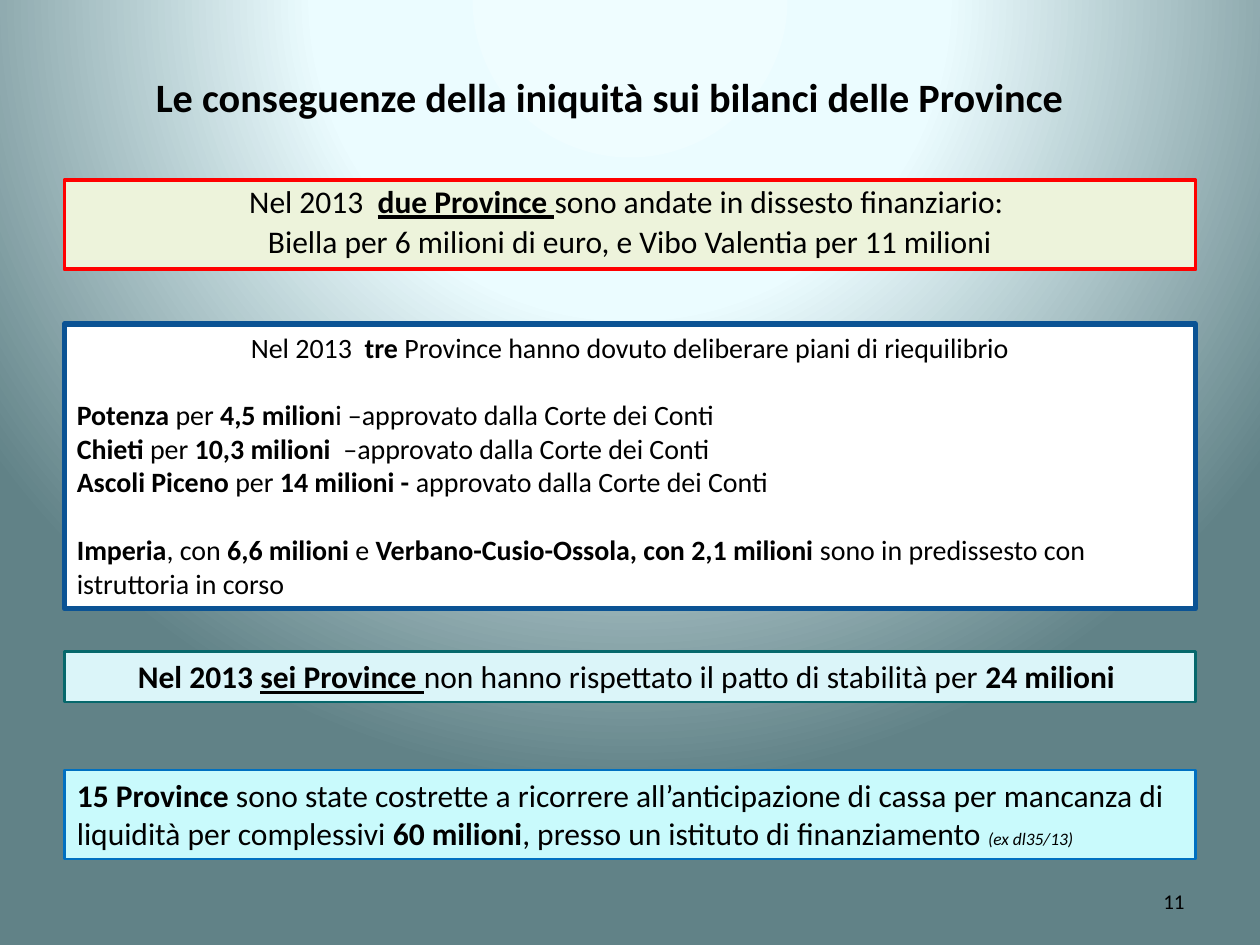
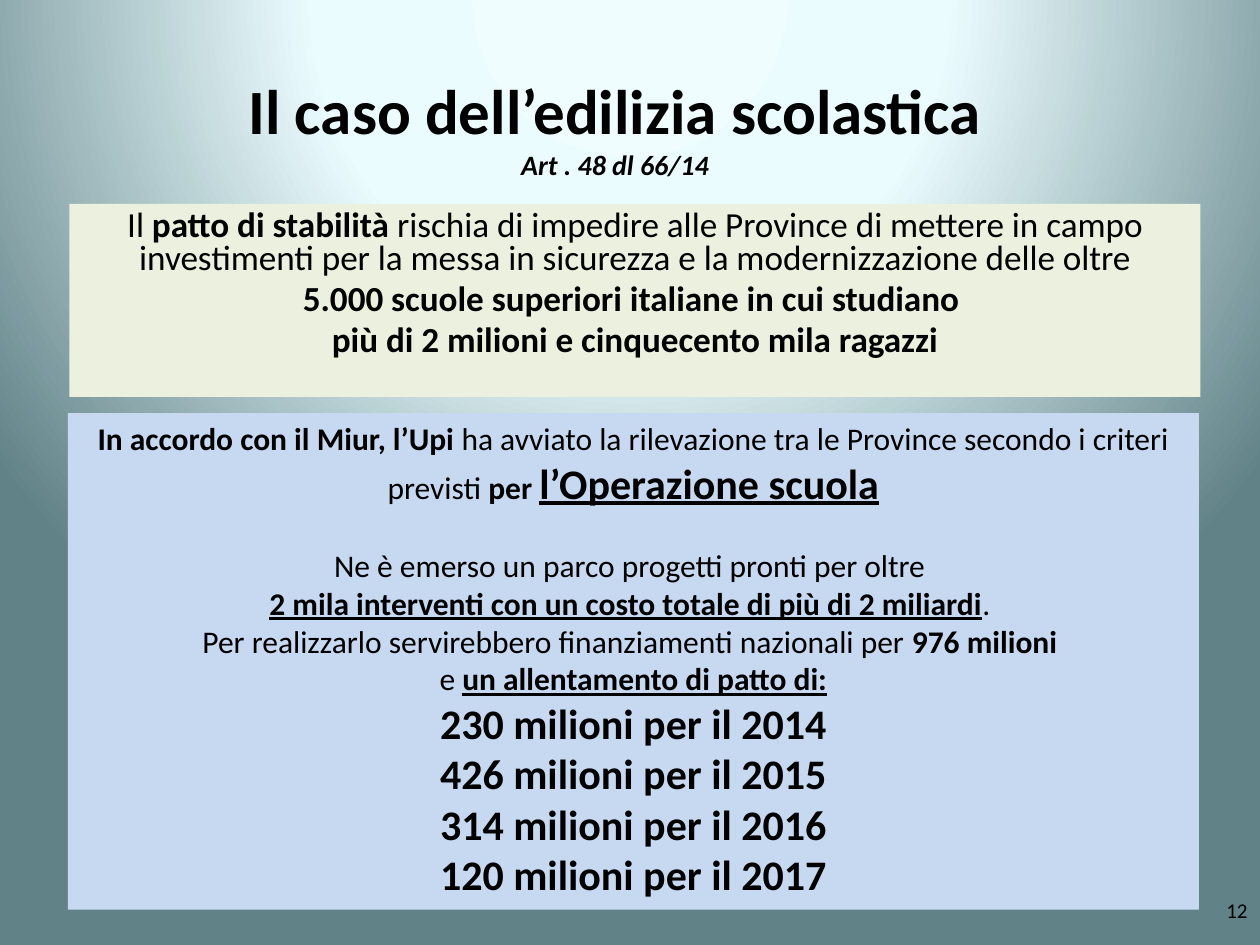
from pptx import Presentation
from pptx.dml.color import RGBColor
from pptx.enum.shapes import MSO_SHAPE
from pptx.enum.text import MSO_ANCHOR, MSO_AUTO_SIZE, PP_ALIGN
from pptx.oxml import parse_xml
from pptx.oxml.ns import nsdecls, qn
from pptx.util import Cm, Pt

FONT = "Calibri"
COLORS = {
    "text": "000000",
    "glow": "EFFDFF",
    "halo": "EBFCFF",
    "edge": "618287",
    "cream": "EDF3DB",
    "sand": "EBF1DE",
    "white": "FFFFFF",
    "ice": "DBF5F9",
    "aqua": "C9FAFC",
    "sky": "C6D9F1",
    "red": "FF0000",
    "navy": "0B5394",
    "teal": "06686C",
    "blue": "0070C0",
}
LEFT, WIDTH = 1.3, 22.8


def rgb(name):
    return RGBColor.from_string(COLORS[name])


def set_background(master):
    master.background.fill.gradient()
    grad = master.element.find(".//" + qn("p:bgPr")).find(qn("a:gradFill"))
    stops = "".join(
        f'<a:gs pos="{pos * 1000}"><a:srgbClr val="{COLORS[name]}"/></a:gs>'
        for pos, name in ((0, "glow"), (40, "halo"), (100, "edge"))
    )
    grad.getparent().replace(grad, parse_xml(
        f'<a:gradFill {nsdecls("a")} rotWithShape="1"><a:gsLst>{stops}</a:gsLst>'
        '<a:path path="circle">'
        '<a:fillToRect l="50000" t="-80000" r="50000" b="180000"/>'
        '</a:path></a:gradFill>'
    ))


def place(sp, left, top, width, height):
    sp.left, sp.top, sp.width, sp.height = map(Cm, (left, top, width, height))


def add_run(p, text, style="", size=18):
    r = p.add_run()
    r.text = text
    r.font.size = Pt(size)
    r.font.color.rgb = rgb("text")
    r.font.bold = "b" in style
    r.font.italic = "i" in style
    r.font.underline = "u" in style


def write(sp, paragraphs, size=18, align=PP_ALIGN.CENTER, anchor=MSO_ANCHOR.TOP):
    tf = sp.text_frame
    tf.word_wrap = True
    tf.auto_size = MSO_AUTO_SIZE.NONE
    tf.vertical_anchor = anchor
    for i, runs in enumerate(paragraphs):
        p = tf.add_paragraph() if i else tf.paragraphs[0]
        p.alignment = align
        p.font.name = FONT
        for text, style, *own_size in runs:
            add_run(p, text, style, *(own_size or [size]))
    return tf.paragraphs


def add_title(slide, height, paragraphs, size):
    sp = slide.shapes.title
    place(sp, 2.8, 1.32, 19.2, height)
    write(sp, paragraphs, size)


def paint(sp, fill, line=None, line_width=0):
    sp.fill.solid()
    sp.fill.fore_color.rgb = rgb(fill)
    if line:
        sp.line.color.rgb = rgb(line)
        sp.line.width = Pt(line_width)
    else:
        sp.line.fill.background()


def fill_body(slide, box, paragraphs, size, spacing, *colors):
    sp = slide.placeholders[1]
    place(sp, *box)
    paint(sp, *colors)
    for p in write(sp, paragraphs, size):
        p.line_spacing = spacing
        p.space_before = Pt(size * 0.2)
        pPr = p._p.get_or_add_pPr()
        pPr.set("marL", "0")
        pPr.set("indent", "0")
        pPr.insert_element_before(
            parse_xml(f'<a:buNone {nsdecls("a")}/>'), "a:tabLst", "a:defRPr", "a:extLst")


def add_box(slide, box, paragraphs, colors, size=18, align=PP_ALIGN.CENTER):
    sp = slide.shapes.add_shape(MSO_SHAPE.RECTANGLE, *map(Cm, box))
    sp.shadow.inherit = False
    paint(sp, *colors)
    return write(sp, paragraphs, size, align)


def add_number(slide, number, left, top):
    sp = slide.shapes.add_textbox(Cm(left), Cm(top), Cm(5.92), Cm(1.02))
    write(sp, [[(str(number), "")]], 12, PP_ALIGN.RIGHT, MSO_ANCHOR.MIDDLE)


def build_budgets(slide):
    add_title(slide, 1.24, [
        [("Le conseguenze della iniquità sui bilanci delle Province ", "b")],
    ], 23)
    fill_body(slide, (LEFT, 3.63, WIDTH, 1.8), [
        [("Nel 2013  ", ""), ("due Province ", "bu"),
         ("sono andate in dissesto finanziario: ", "")],
        [("Biella per 6 milioni di euro, e Vibo Valentia per 11 milioni", "")],
    ], 18, 0.9, "cream", "red", 2.25)
    plans = add_box(slide, (LEFT, 6.53, WIDTH, 5.74), [
        [("Nel 2013  ", ""), ("tre ", "b"),
         ("Province hanno dovuto deliberare piani di riequilibrio", "")],
        [("Potenza", "b"), (" per ", ""), ("4,5 milion", "b"),
         ("i –approvato dalla Corte dei Conti", "")],
        [("Chieti", "b"), (" per ", ""), ("10,3 milioni  ", "b"),
         ("–approvato dalla Corte dei Conti", "")],
        [("Ascoli Piceno ", "b"), ("per", ""), (" 14 milioni - ", "b"),
         ("approvato dalla Corte dei Conti", "")],
        [("Imperia", "b"), (", con ", ""), ("6,6 milioni ", "b"), ("e ", ""),
         ("Verbano-Cusio-Ossola, con 2,1 milioni ", "b"),
         ("sono in predissesto con istruttoria in corso", "")],
    ], ("white", "navy", 3), 16, PP_ALIGN.LEFT)
    plans[0].alignment = PP_ALIGN.CENTER
    for p in (plans[1], plans[4]):
        p.space_before = Pt(19.5)
    add_box(slide, (LEFT, 13.13, WIDTH, 1.02), [
        [("Nel 2013 ", "b"), ("sei Province ", "bu"),
         ("non hanno rispettato il patto di stabilità per ", ""),
         ("24 milioni ", "b")],
    ], ("ice", "teal", 1.5))
    add_box(slide, (LEFT, 15.52, WIDTH, 1.8), [
        [("15 Province", "b"),
         (" sono state costrette a ricorrere all’anticipazione di cassa per "
          "mancanza di liquidità per complessivi ", ""),
         ("60 milioni", "b"), (", presso un istituto di finanziamento ", ""),
         ("(ex dl35/13)", "i", 10)],
    ], ("aqua", "blue", 1.5), align=PP_ALIGN.LEFT)
    add_number(slide, 11, 18.21, 17.65)


def build_schools(slide):
    add_title(slide, 2.49, [
        [("Il caso dell’edilizia scolastica", "b")],
        [("Art . 48 dl 66/14", "bi", 16)],
    ], 36)
    fill_body(slide, (1.4, 4.11, WIDTH, 3.89), [
        [("Il ", ""), ("patto di stabilità ", "b"),
         ("rischia di impedire alle Province di mettere in campo investimenti "
          "per la messa in sicurezza e la modernizzazione delle oltre", "")],
        [("5.000 scuole superiori italiane in cui studiano ", "b")],
        [("più di 2 milioni e cinquecento mila ragazzi", "b")],
    ], 20.1, 0.8, "sand")
    relief = ((230, 2014), (426, 2015), (314, 2016), (120, 2017))
    survey = add_box(slide, (1.37, 8.33, WIDTH, 10.01), [
        [("In accordo con il Miur, l’Upi ", "b"),
         ("ha avviato la rilevazione tra le Province secondo i criteri previsti ", ""),
         ("per ", "b"), ("l’Operazione scuola", "bu", 24)],
        [("Ne è emerso un parco progetti pronti per oltre ", "")],
        [("2 mila interventi con un costo totale di più di 2 miliardi", "bu"),
         (". ", "")],
        [("Per realizzarlo servirebbero finanziamenti nazionali per ", ""),
         ("976 milioni ", "b")],
        [("e ", ""), ("un allentamento di patto di:", "bu")],
        *[[(f"{amount} milioni per il {year}", "b", 24)] for amount, year in relief],
    ], ("sky",))
    survey[1].space_before = Pt(22)
    add_number(slide, 12, 19.48, 17.83)


def main():
    prs = Presentation()
    prs.slide_width, prs.slide_height = Cm(25.4), Cm(19.05)
    set_background(prs.slide_master)
    for build in (build_budgets, build_schools):
        build(prs.slides.add_slide(prs.slide_layouts[1]))
    prs.save("out.pptx")


if __name__ == "__main__":
    main()
